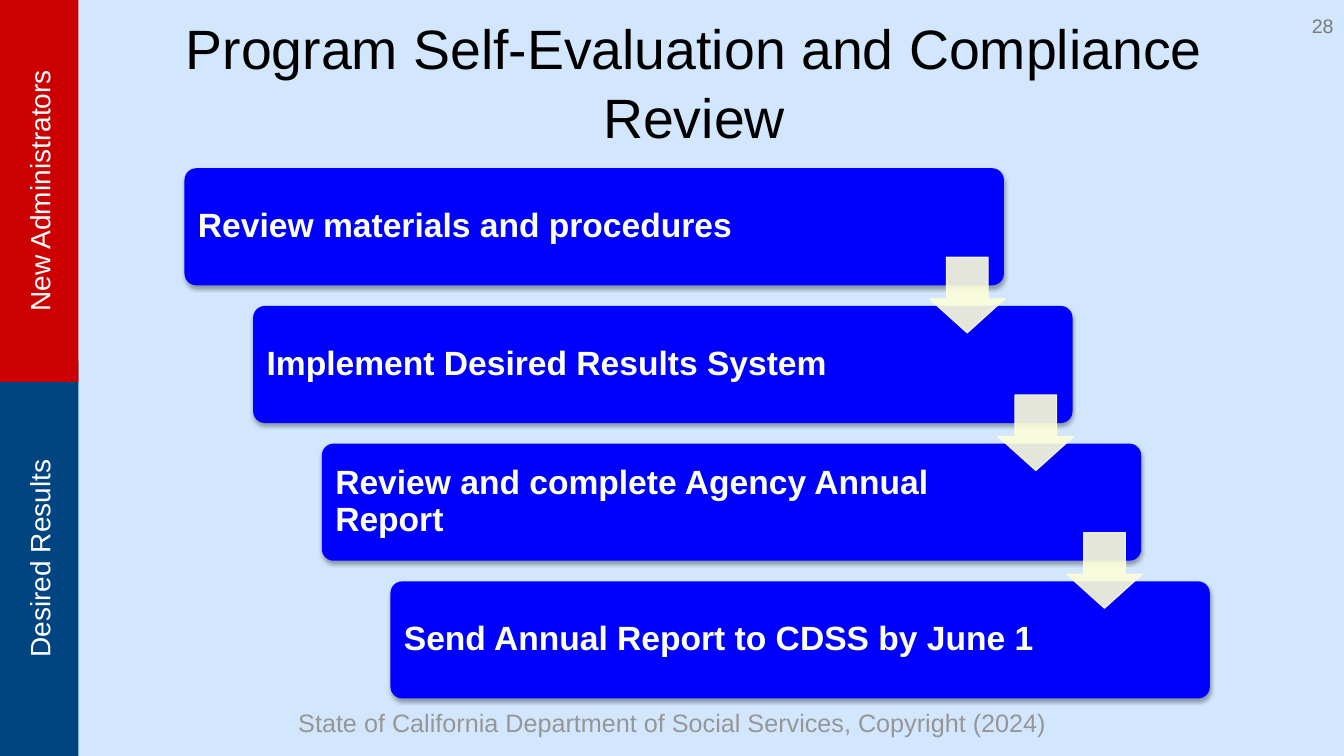
from pptx import Presentation
from pptx import util as u
from pptx.dml.color import RGBColor
from pptx.enum import shapes, text
from pptx.oxml import parse_xml
from pptx.oxml.ns import nsdecls
from lxml import etree

Cm, Pt = u.Cm, u.Pt
Kind, Side, Mid = shapes.MSO_SHAPE, text.PP_ALIGN, text.MSO_ANCHOR.MIDDLE
hues = {
    "back": "D2E7FE", "red": "CC0000", "navy": "014482", "blue": "0000FF",
    "cream": "FBFFE8", "arrow": "FDFFD9", "white": "FFFFFF",
    "black": "000000", "foot": "969696", "num": "797979",
}


def write(shape, words, size, hue, align, wrap=True):
    frame = shape.text_frame
    frame.text = words
    frame.word_wrap = wrap
    frame.auto_size = text.MSO_AUTO_SIZE.NONE
    frame.vertical_anchor = Mid
    para = frame.paragraphs[0]
    para.alignment = align
    para.font.name = "Arial"
    para.font.size = Pt(size)
    para.font.color.rgb = RGBColor.from_string(hues[hue])
    return para


def draw(kind, box, hue):
    shape = slide.shapes.add_shape(kind, *map(Cm, box))
    shape.shadow.inherit = False
    shape.fill.solid()
    shape.fill.fore_color.rgb = RGBColor.from_string(hues[hue])
    shape.line.fill.background()
    return shape


deck = Presentation()
deck.slide_width, deck.slide_height = Cm(33.87), Cm(19.05)
slide = deck.slides.add_slide(deck.slide_layouts[5])
slide.background.fill.solid()
slide.background.fill.fore_color.rgb = RGBColor.from_string(hues["back"])

# Side bars, turned to read upwards: label, colour, top, length
wide = 1.98
for label, hue, top, size in [
    ("Desired Results", "navy", 9.09, 9.96),
    ("New Administrators", "red", 0, 9.62),
]:
    box = ((wide - size) / 2, top + (size - wide) / 2, size, wide)
    bar = draw(Kind.RECTANGLE, box, hue)
    bar.rotation = 270
    write(bar, label, 20, "white", Side.CENTER, False)

# Title
title = slide.shapes.title
title.left, title.top, title.width, title.height = map(Cm, (3.1, 0.43, 28.78, 3.18))
para = write(title, "Program Self-Evaluation and Compliance Review", 39.6, "black", Side.CENTER)
para.line_spacing = 1.05

# Staircase of steps
steps = [
    "Review materials and procedures",
    "Implement Desired Results System",
    "Review and complete Agency Annual Report",
    "Send Annual Report to CDSS by June 1",
]
left, top, right, down = 4.65, 4.24, 1.73, 3.47
for i, step in enumerate(steps):
    x, y = left + i * right, top + i * down
    card = draw(Kind.ROUNDED_RECTANGLE, (x, y, 20.65, 2.95), "blue")
    card.adjustments[0] = 0.1
    glow = card._element.spPr.find("{*}effectLst")
    glow.append(parse_xml(
        f'<a:outerShdw {nsdecls("a")} blurRad="{Pt(3.1)}" dist="{Pt(1.8)}" dir="5400000" '
        'rotWithShape="0"><a:srgbClr val="000000"><a:alpha val="35000"/></a:srgbClr></a:outerShdw>'))
    note = slide.shapes.add_textbox(Cm(x + 0.09), Cm(y + 0.09), Cm(16.85), Cm(2.77))
    para = write(note, step, 24, "cream", Side.LEFT)
    para.font.bold = True
    para.line_spacing = 0.9
    para.space_after = Pt(8.4)
    frame = note.text_frame
    frame.margin_left = frame.margin_right = Cm(0.25)
    frame.margin_top = frame.margin_bottom = Cm(0.25)

# Arrows between the steps
for i in range(len(steps) - 1):
    box = (23.42 + i * right, 6.48 + i * down, 1.91, 1.91)
    arrow = draw(Kind.DOWN_ARROW, box, "arrow")
    arrow.adjustments[0], arrow.adjustments[1] = 0.55, 0.45
    arrow.line.color.rgb = RGBColor.from_string(hues["arrow"])
    arrow.line.width = Pt(0.75)
    for tint in arrow._element.spPr.iter("{*}srgbClr"):
        etree.SubElement(tint, tint.tag.replace("srgbClr", "alpha"), val="90000")

# Footer and slide number
for words, box, size, hue, align in [
    ("State of California Department of Social Services, Copyright (2024)",
     (6.88, 17.78, 20.12, 0.84), 18, "foot", Side.CENTER),
    ("28", (31.04, 0, 2.82, 1.27), 14, "num", Side.RIGHT),
]:
    write(slide.shapes.add_textbox(*map(Cm, box)), words, size, hue, align)

deck.save("out.pptx")
